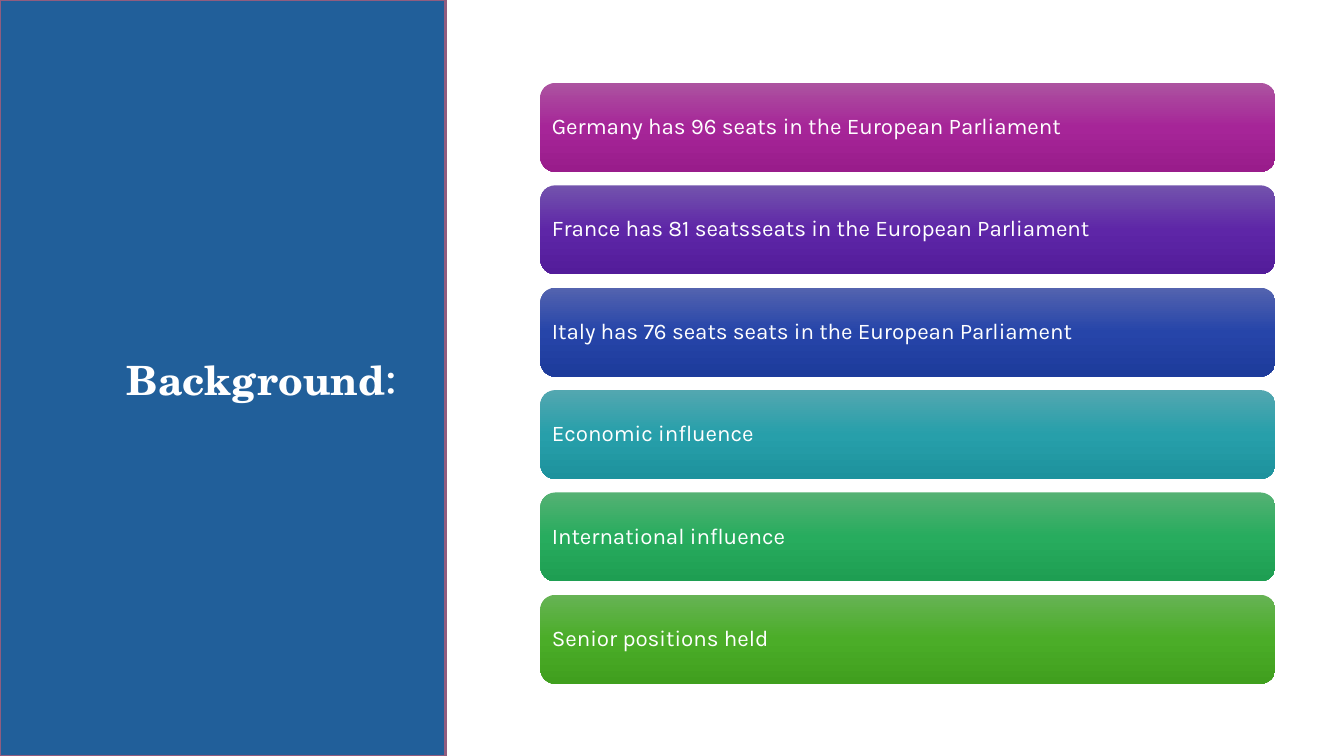
from copy import deepcopy

from pptx import Presentation
from pptx.dml.color import RGBColor
from pptx.enum.shapes import MSO_SHAPE
from pptx.enum.text import MSO_ANCHOR, PP_ALIGN
from pptx.oxml.ns import qn
from pptx.util import Cm, Pt

WHITE = RGBColor(0xFF, 0xFF, 0xFF)
PANEL_BLUE = RGBColor(0x21, 0x5F, 0x9A)
PANEL_EDGE = RGBColor(0x91, 0x5D, 0x7F)
MAGENTA = [RGBColor(0xAC, 0x53, 0xA0), RGBColor(0xA6, 0x25, 0x98), RGBColor(0x99, 0x1C, 0x8B)]
PURPLE = [RGBColor(0x73, 0x53, 0xAD), RGBColor(0x5E, 0x26, 0xA7), RGBColor(0x53, 0x1C, 0x9A)]
BLUE = [RGBColor(0x53, 0x63, 0xAF), RGBColor(0x26, 0x45, 0xA9), RGBColor(0x1D, 0x3B, 0x9B)]
TEAL = [RGBColor(0x53, 0xA7, 0xB0), RGBColor(0x27, 0x9F, 0xAA), RGBColor(0x1D, 0x92, 0x9D)]
GREEN = [RGBColor(0x54, 0xB1, 0x73), RGBColor(0x27, 0xAC, 0x5E), RGBColor(0x1E, 0x9E, 0x52)]
LIME = [RGBColor(0x66, 0xB3, 0x54), RGBColor(0x4B, 0xAD, 0x28), RGBColor(0x40, 0x9F, 0x1E)]

BODY_FONT = "Karla"
TITLE_FONT = "TeX Gyre Schola"

POINTS = [
    ("Germany has 96 seats in the European Parliament", MAGENTA),
    ("France has 81 seatsseats in the European Parliament", PURPLE),
    ("Italy has 76 seats seats in the European Parliament", BLUE),
    ("Economic influence", TEAL),
    ("International influence", GREEN),
    ("Senior positions held", LIME),
]
BAR_TOP = 2.09
BAR_PITCH = 2.58


def add_panel(slide):
    panel = slide.shapes.add_shape(MSO_SHAPE.RECTANGLE, 0, 0, Cm(11.23), Cm(19.05))
    panel.shadow.inherit = False
    panel.fill.solid()
    panel.fill.fore_color.rgb = PANEL_BLUE
    panel.line.color.rgb = PANEL_EDGE
    panel.line.width = Pt(1.5)
    slide.shapes._spTree.insert(2, panel._element)


def set_title(slide):
    title = slide.shapes.title
    title.left, title.top = Cm(1.6), Cm(8.2)
    title.width, title.height = Cm(8.66), Cm(2.18)
    frame = title.text_frame
    frame.word_wrap = True
    frame.vertical_anchor = MSO_ANCHOR.BOTTOM
    paragraph = frame.paragraphs[0]
    paragraph.alignment = PP_ALIGN.RIGHT
    paragraph.line_spacing = 0.9
    paragraph.font.color.rgb = WHITE
    for text, font, size, bold in (
        ("Background", TITLE_FONT, 28.8, True),
        (":", BODY_FONT, 36, False),
    ):
        run = paragraph.add_run()
        run.text = text
        run.font.name = font
        run.font.size = Pt(size)
        run.font.bold = bold
        run.font.color.rgb = WHITE


def fill_with_gradient(shape, colors):
    shape.fill.gradient()
    shape.fill.gradient_angle = 270
    stop_list = shape._element.spPr.find(qn("a:gradFill")).find(qn("a:gsLst"))
    stop_list.insert(1, deepcopy(stop_list[0]))
    for stop, position, color in zip(shape.fill.gradient_stops, (0, 0.5, 1), colors):
        stop.position = position
        stop.color.rgb = color


def add_bar(slide, top, text, colors):
    bar = slide.shapes.add_shape(
        MSO_SHAPE.ROUNDED_RECTANGLE, Cm(13.62), Cm(top), Cm(18.52), Cm(2.24)
    )
    bar.shadow.inherit = False
    bar.line.fill.background()
    fill_with_gradient(bar, colors)
    frame = bar.text_frame
    frame.word_wrap = True
    frame.vertical_anchor = MSO_ANCHOR.MIDDLE
    frame.margin_left = frame.margin_right = Cm(0.18)
    frame.margin_top = frame.margin_bottom = Cm(0.18)
    paragraph = frame.paragraphs[0]
    paragraph.text = text
    paragraph.alignment = PP_ALIGN.LEFT
    paragraph.line_spacing = 0.9
    paragraph.font.name = BODY_FONT
    paragraph.font.size = Pt(16)
    paragraph.font.color.rgb = WHITE


def main():
    presentation = Presentation()
    presentation.slide_width = Cm(33.87)
    presentation.slide_height = Cm(19.05)
    slide = presentation.slides.add_slide(presentation.slide_layouts[5])
    add_panel(slide)
    set_title(slide)
    for index, (text, colors) in enumerate(POINTS):
        add_bar(slide, BAR_TOP + index * BAR_PITCH, text, colors)
    presentation.save("out.pptx")


if __name__ == "__main__":
    main()
